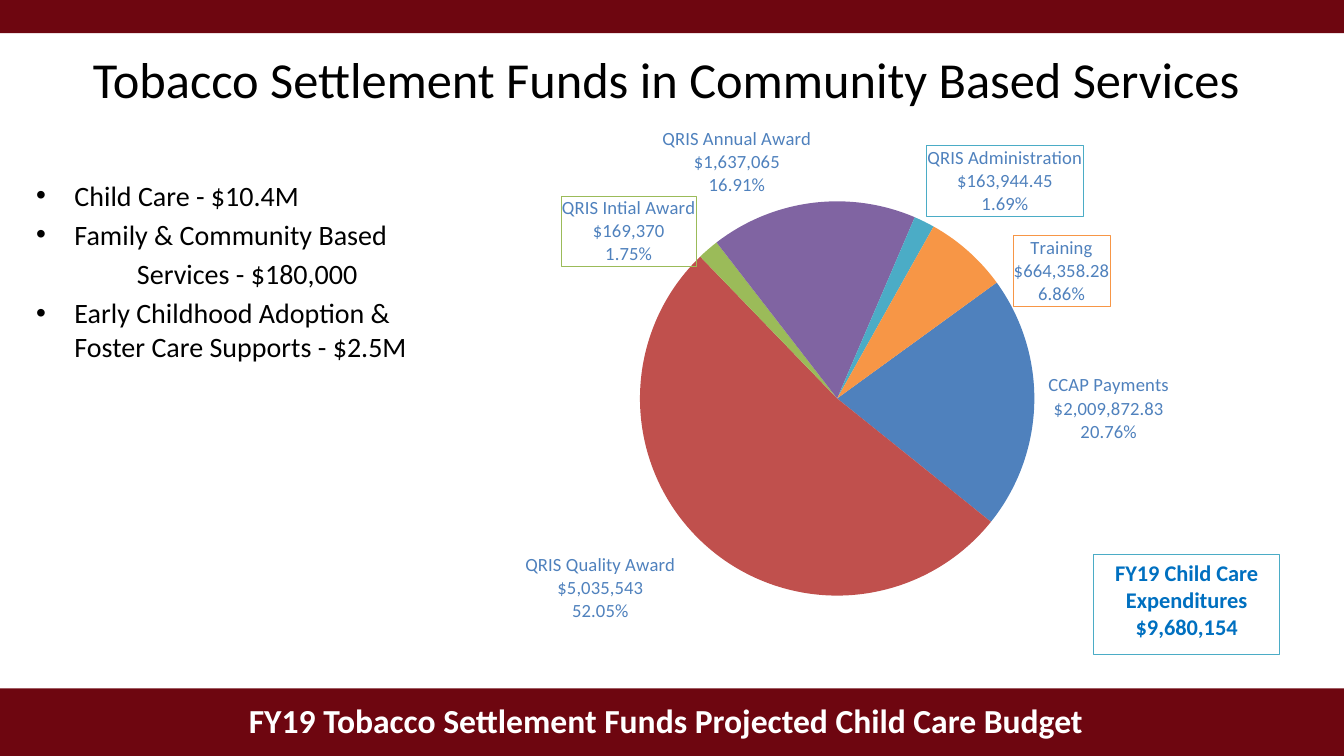
from lxml.etree import SubElement
from pptx import Presentation
from pptx.chart.data import CategoryChartData
from pptx.dml.color import RGBColor
from pptx.enum.chart import XL_CHART_TYPE, XL_LABEL_POSITION
from pptx.enum.shapes import MSO_SHAPE
from pptx.enum.text import MSO_ANCHOR, PP_ALIGN
from pptx.oxml import parse_xml
from pptx.oxml.ns import nsdecls, qn
from pptx.util import Inches, Pt

FONT = "Calibri"
MAROON, WHITE, BLACK = "6E0610", "FFFFFF", "000000"
LABEL_BLUE, TOTAL_BLUE, TEAL = "4F81BD", "0070C0", "4BACC6"

TITLE = "Tobacco Settlement Funds in Community Based Services"
FOOTER = "FY19 Tobacco Settlement Funds Projected Child Care Budget"
TOTAL = "FY19 Child Care Expenditures\n$9,680,154"
# text, has a bullet
FUNDS = [
    ("Child Care - $10.4M", True),
    ("Family & Community Based", True),
    ("Services - $180,000", False),
    ("Early Childhood Adoption & Foster Care Supports - $2.5M", True),
]
# category, value, amount label, share, colour, label shift (chart fractions), boxed label
SLICES = [
    ("CCAP Payments", 2009873, "$2,009,872.83", "20.76%", "4F81BD", (0.01, 0.01), False),
    ("QRIS Quality Award", 5035543, "$5,035,543", "52.05%", "C0504D", (-0.03, 0.01), False),
    ("QRIS Intial Award", 169370, "$169,370", "1.75%", "9BBB59", (-0.01, 0.04), True),
    ("QRIS Annual Award", 1637065, "$1,637,065", "16.91%", "8064A2", None, False),
    ("QRIS Administration", 163944, "$163,944.45", "1.69%", TEAL, None, True),
    ("Training", 664358, "$664,358.28", "6.86%", "F79646", (0.05, 0.11), True),
]
FIRST_SLICE_ANGLE = 54
PIE_FRAME = {"x": 0.25, "y": 0.16, "w": 0.48, "h": 0.73}


def rgb(color):
    return RGBColor.from_string(color)


def style(paragraph, size, color, bold=False, align=None):
    font = paragraph.font
    font.name, font.size, font.bold = FONT, Pt(size), bold
    font.color.rgb = rgb(color)
    paragraph.alignment = align


def add_box(left, top, width, height, fill, line=None):
    box = slide.shapes.add_shape(MSO_SHAPE.RECTANGLE, Inches(left), Inches(top),
                                 Inches(width), Inches(height))
    box.shadow.inherit = False
    box.fill.solid()
    box.fill.fore_color.rgb = rgb(fill)
    if line:
        box.line.color.rgb = rgb(line)
        box.line.width = Pt(0.75)
    else:
        box.line.fill.background()
    return box


def add_text(left, top, width, height, wrap=True):
    frame = slide.shapes.add_textbox(Inches(left), Inches(top),
                                     Inches(width), Inches(height)).text_frame
    frame.word_wrap = wrap
    return frame


def manual_layout(entries):
    """Return a c:layout element holding the given (tag, value) pairs."""
    inner = "".join(f'<c:{tag} val="{value}"/>' for tag, value in entries)
    return parse_xml(f'<c:layout {nsdecls("c")}><c:manualLayout>{inner}'
                     '</c:manualLayout></c:layout>')


def outline(color):
    return parse_xml(f'<c:spPr {nsdecls("c", "a")}><a:noFill/><a:ln w="9525"><a:solidFill>'
                     f'<a:srgbClr val="{color}"/></a:solidFill></a:ln></c:spPr>')


def add_pie():
    data = CategoryChartData(number_format='"$"#,##0')
    data.categories = [entry[0] for entry in SLICES]
    data.add_series("Series 1", [entry[1] for entry in SLICES])
    chart = slide.shapes.add_chart(XL_CHART_TYPE.PIE, Inches(4.31), Inches(1.14),
                                   Inches(8.15), Inches(5.36), data).chart
    chart.has_legend = chart.has_title = False
    chart.font.name, chart.font.size = FONT, Pt(10)
    chart.font.color.rgb = rgb(BLACK)

    plot = chart.plots[0]
    plot.vary_by_categories = True
    pie = plot.series[0]
    labels = pie.data_labels
    labels.show_value = labels.show_percentage = labels.show_category_name = True
    labels.number_format, labels.number_format_is_linked = '"$"#,##0', False
    labels.position = XL_LABEL_POSITION.OUTSIDE_END
    labels.font.name, labels.font.size = FONT, Pt(13.3)
    labels.font.color.rgb = rgb(LABEL_BLUE)

    for index, (name, _, amount, share, color, shift, boxed) in enumerate(SLICES):
        point = pie.points[index]
        point.format.fill.solid()
        point.format.fill.fore_color.rgb = rgb(color)
        label = point.data_label
        label.text_frame.text = "\n".join((name, amount, share))
        for paragraph in label.text_frame.paragraphs:
            for run in paragraph.runs:
                run.font.name, run.font.size = FONT, Pt(13.3)
                run.font.color.rgb = rgb(LABEL_BLUE)
        label.position = XL_LABEL_POSITION.OUTSIDE_END
        label_xml = pie.points[index].data_label.text_frame._txBody.getparent().getparent()
        if shift:
            label_xml.find(qn("c:idx")).addnext(manual_layout(zip("xy", shift)))
        if boxed:
            label_xml.find(qn("c:tx")).addnext(outline(color))

    leader = labels._element.find(qn("c:showLeaderLines"))
    if leader is None:
        leader = SubElement(labels._element, qn("c:showLeaderLines"))
    leader.set("val", "0")

    pie_xml = plot._element
    angle = pie_xml.find(qn("c:firstSliceAng"))
    if angle is None:
        angle = SubElement(pie_xml, qn("c:firstSliceAng"))
    angle.set("val", str(FIRST_SLICE_ANGLE))
    plot_area = pie_xml.getparent()
    for old_layout in plot_area.findall(qn("c:layout")):
        plot_area.remove(old_layout)
    frame = [("layoutTarget", "inner"), ("xMode", "edge"), ("yMode", "edge")]
    plot_area.insert(0, manual_layout(frame + list(PIE_FRAME.items())))


prs = Presentation()
prs.slide_width, prs.slide_height = Inches(13.33), Inches(7.5)
slide = prs.slides.add_slide(prs.slide_layouts[5])

add_box(0, 0, 13.33, 0.33, MAROON)
add_box(0, 6.83, 13.33, 0.67, MAROON)

title = slide.shapes.title
title.left, title.top, title.width, title.height = map(Inches, (0.82, 0.43, 11.65, 0.71))
title.text_frame.text = TITLE
title.text_frame.vertical_anchor = MSO_ANCHOR.TOP
style(title.text_frame.paragraphs[0], 36, BLACK, align=PP_ALIGN.LEFT)

footer = add_text(2.36, 6.89, 8.49, 0.5, wrap=False)
footer.text = FOOTER
style(footer.paragraphs[0], 24, WHITE, True, PP_ALIGN.CENTER)

funds = add_text(0.26, 1.72, 3.92, 2.22)
funds.text = "\n".join(text for text, _ in FUNDS)
for position, (paragraph, (_, bulleted)) in enumerate(zip(funds.paragraphs, FUNDS)):
    properties = paragraph._p.get_or_add_pPr()
    indent = Inches(0.38) if bulleted else 0
    properties.set("marL", str(indent or Inches(1)))
    properties.set("indent", str(-indent))
    if bulleted:
        SubElement(properties, qn("a:buFont")).set("typeface", "Arial")
        SubElement(properties, qn("a:buChar")).set("char", "•")
    style(paragraph, 20, BLACK)
    paragraph.space_before = Pt(4 if position else 0)

add_pie()

total = add_box(10.85, 5.5, 1.84, 0.99, WHITE, TEAL).text_frame
total.text = TOTAL
total.word_wrap = True
total.vertical_anchor = MSO_ANCHOR.TOP
for paragraph in total.paragraphs:
    style(paragraph, 16, TOTAL_BLUE, True, PP_ALIGN.CENTER)

prs.save("out.pptx")
